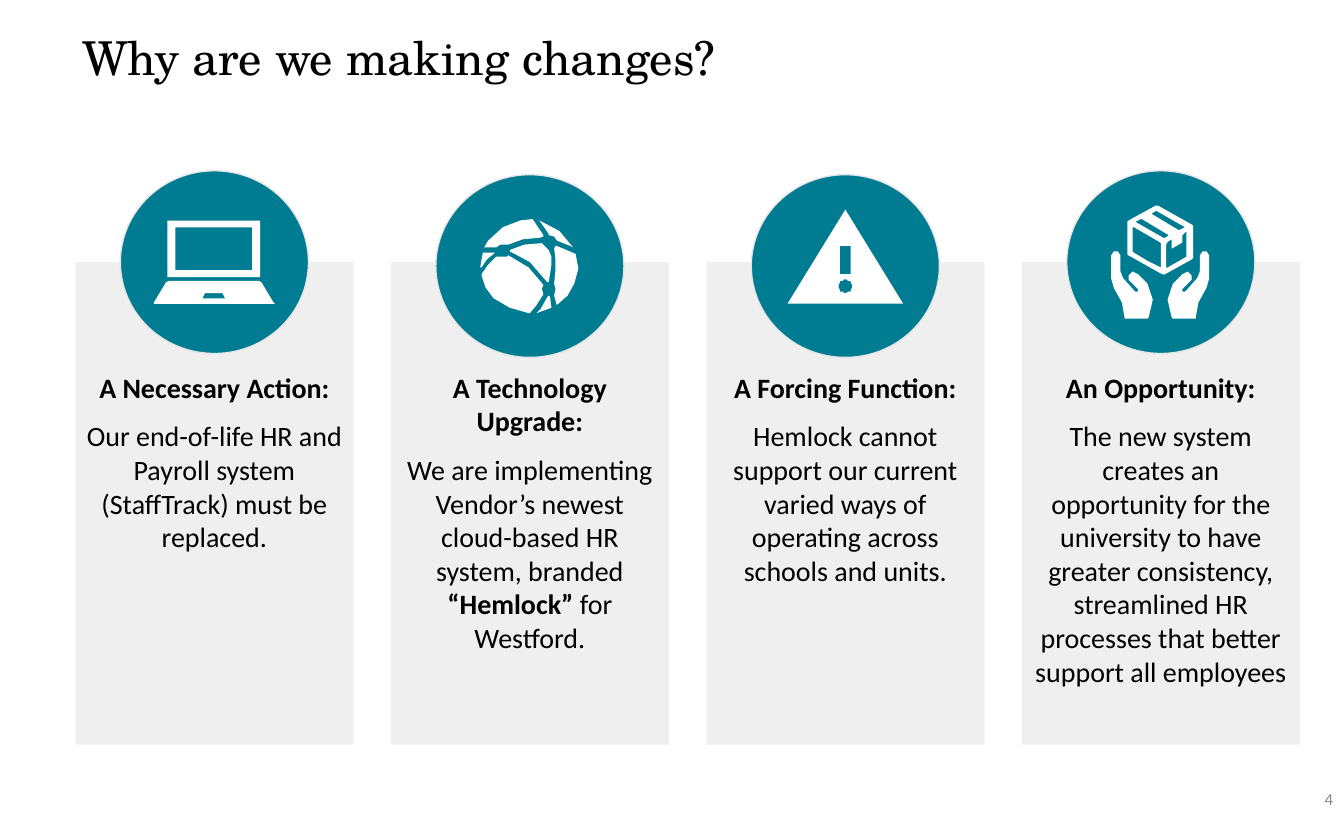
from math import cos, pi, sin

from pptx import Presentation
from pptx.dml.color import RGBColor
from pptx.enum.shapes import MSO_SHAPE
from pptx.enum.text import MSO_ANCHOR, MSO_AUTO_SIZE, PP_ALIGN
from pptx.util import Pt

RECTANGLE, OVAL = MSO_SHAPE.RECTANGLE, MSO_SHAPE.OVAL
TOP, MIDDLE = MSO_ANCHOR.TOP, MSO_ANCHOR.MIDDLE
LEFT, CENTER, RIGHT = PP_ALIGN.LEFT, PP_ALIGN.CENTER, PP_ALIGN.RIGHT
NO_FIT = MSO_AUTO_SIZE.NONE

COLORS = {"card": "EFEFEF", "disc": "007C92", "ring": "E7E6E6",
          "icon": "FFFFFF", "text": "000000", "number": "888888"}
TITLE_FONT, BODY_FONT = "TeX Gyre Schola", "Calibri"
TITLE_ONLY = 5
CARD_STEP, CARD_WIDTH = 169, 149
DISC_WIDTH, DISC_HEIGHT = 100.8, 97.9
ICON_GRID = 140


def rectangle(left, top, right, bottom):
    return [(left, top), (right, top), (right, bottom), (left, bottom)]


def dot(x, y, radius, sides=24):
    angles = [2 * pi * side / sides for side in range(sides)]
    return [(x + radius * cos(a), y + radius * sin(a)) for a in angles]


RIGHT_HAND = [(96, 110), (79, 110), (78, 109), (75, 96), (79, 84), (86, 77),
              (90, 75), (93, 78), (93, 81), (86, 88), (86, 90), (88, 90),
              (97, 80), (99, 75), (99, 63), (101, 60), (104, 60), (106, 63),
              (106, 80), (104, 87), (98, 98), (96, 109)]

LAPTOP = [
    [[(115, 99), (25, 99), (25, 98), (34, 83), (36, 82), (103, 82),
      (105, 83), (114, 98)],
     [(61, 95), (78, 95), (76, 91), (63, 91)]],
    [rectangle(35, 37, 104, 79), rectangle(41, 42, 98, 74)],
]
GLOBE = [
    [[(80, 82), (79, 85), (80, 89), (75, 97), (70, 103), (69, 103), (55, 99),
      (43, 92), (37, 84), (34, 75), (34, 74), (39, 67), (45, 61), (46, 61),
      (53, 61), (54, 60), (69, 69)]],
    [[(90, 97), (88, 90), (89, 85), (88, 81), (89, 71), (89, 63), (88, 55),
      (89, 53), (90, 53), (104, 59), (106, 70), (103, 81), (98, 90)]],
    [[(36, 54), (39, 49), (50, 39), (63, 34), (72, 33), (80, 45), (80, 46),
      (77, 47), (65, 48), (54, 52), (52, 52), (48, 52), (45, 54)]],
    [[(86, 67), (84, 80), (83, 80), (70, 65), (55, 57), (55, 56), (66, 52),
      (78, 51), (79, 51), (83, 55), (84, 56), (86, 61)]],
    [[(77, 34), (92, 42), (102, 54), (100, 53), (90, 49), (88, 46), (84, 45),
      (84, 44)]],
    [[(75, 103), (78, 100), (83, 91), (84, 90), (85, 91), (86, 99)]],
    [[(33, 69), (34, 63), (35, 58), (44, 58), (38, 63), (34, 69)]],
]
WARNING = [
    [[(70, 26), (27, 96), (113, 96)], rectangle(66, 53, 74, 74),
     dot(70, 83, 5)],
]
PARCEL = [
    [[(94, 41), (94, 65), (93, 66), (73, 77), (71, 77), (46, 63), (45, 62),
      (45, 38), (46, 37), (66, 26), (68, 26), (93, 40)],
     [(70, 72), (70, 54), (69, 53), (50, 42), (49, 42), (49, 60), (50, 61),
      (60, 67)],
     [(78, 51), (75, 53), (74, 55), (74, 72), (75, 72), (89, 64), (89, 45),
      (87, 47), (86, 48), (86, 53), (85, 54), (78, 58)],
     [(51, 38), (72, 50), (73, 50), (76, 48), (56, 36), (55, 36)],
     [(63, 32), (83, 44), (84, 44), (88, 42), (67, 30), (66, 30)]],
    [RIGHT_HAND],
    [[(139 - x, y) for x, y in RIGHT_HAND]],
]

CARDS = [
    ("A Necessary Action:",
     [("Our end-of-life HR and Payroll system (StaffTrack) must be replaced.",
       False)], LAPTOP, 91.5),
    ("A Technology Upgrade:",
     [("We are implementing Vendor’s newest cloud-based HR system, branded ",
       False), ("“Hemlock”", True), (" for Westford.", False)], GLOBE, 93.6),
    ("A Forcing Function:",
     [("Hemlock cannot support our current varied ways of operating across "
       "schools and units.", False)], WARNING, 93.6),
    ("An Opportunity:",
     [("The new system creates an opportunity for the university to have "
       "greater consistency, streamlined HR processes that better support "
       "all employees", False)], PARCEL, 91.5),
]


def paint(shape, color):
    shape.shadow.inherit = False
    shape.fill.solid()
    shape.fill.fore_color.rgb = RGBColor.from_string(COLORS[color])
    shape.line.fill.background()


def style(span, font, size, color, bold=False):
    span.font.name = font
    span.font.size = Pt(size)
    span.font.bold = bold
    span.font.color.rgb = RGBColor.from_string(COLORS[color])


def set_frame(frame, anchor, side=5.76, top=2.88):
    frame.word_wrap = True
    frame.auto_size = NO_FIT
    frame.vertical_anchor = anchor
    frame.margin_left = frame.margin_right = Pt(side)
    frame.margin_top, frame.margin_bottom = Pt(top), Pt(2.88)


def add_title(page, left, top, width, height):
    title = page.shapes.title
    title.left, title.top = Pt(left), Pt(top)
    title.width, title.height = Pt(width), Pt(height)
    title.text_frame.text = "Why are we making changes?"
    set_frame(title.text_frame, TOP)
    para = title.text_frame.paragraphs[0]
    para.alignment = LEFT
    para.line_spacing = 0.9
    style(para.runs[0], TITLE_FONT, 25, "text")


def add_card(page, left, top, width, height, heading, body):
    card = page.shapes.add_shape(RECTANGLE, Pt(left), Pt(top), Pt(width), Pt(height))
    paint(card, "card")
    frame = card.text_frame
    set_frame(frame, TOP, top=58)
    frame.text = heading
    para = frame.paragraphs[0]
    para.alignment = CENTER
    style(para.runs[0], BODY_FONT, 15, "text", True)
    para = frame.add_paragraph()
    para.alignment = CENTER
    para.space_before = Pt(8)
    for words, bold in body:
        span = para.add_run()
        span.text = words
        style(span, BODY_FONT, 15, "text", bold)


def add_badge(page, left, top, width, height, icon):
    disc = page.shapes.add_shape(OVAL, Pt(left), Pt(top), Pt(width), Pt(height))
    paint(disc, "disc")
    disc.line.color.rgb = RGBColor.from_string(COLORS["ring"])
    disc.line.width = Pt(0.75)
    for outlines in icon:
        builder = page.shapes.build_freeform(*outlines[0][0], scale=Pt(width / ICON_GRID))
        for outline in outlines:
            builder.move_to(*outline[0])
            builder.add_line_segments(outline[1:], close=True)
        paint(builder.convert_to_shape(Pt(left), Pt(top)), "icon")


def add_page_number(page, left, top, width, height):
    box = page.shapes.add_textbox(Pt(left), Pt(top), Pt(width), Pt(height))
    box.text_frame.text = "4"
    set_frame(box.text_frame, MIDDLE)
    para = box.text_frame.paragraphs[0]
    para.alignment = RIGHT
    style(para.runs[0], BODY_FONT, 9, "number")


def main():
    deck = Presentation()
    deck.slide_width, deck.slide_height = Pt(720), Pt(450)
    page = deck.slides.add_slide(deck.slide_layouts[TITLE_ONLY])
    add_title(page, 38.2, 15.8, 607.7, 39.6)
    for index, (heading, body, icon, badge_top) in enumerate(CARDS):
        left = 40.4 + index * CARD_STEP
        add_card(page, left, 140.4, CARD_WIDTH, 258.5, heading, body)
        add_badge(page, left + (CARD_WIDTH - DISC_WIDTH) / 2, badge_top,
                  DISC_WIDTH, DISC_HEIGHT, icon)
    add_page_number(page, 558, 416.2, 162, 23.8)
    deck.save("out.pptx")


if __name__ == "__main__":
    main()
